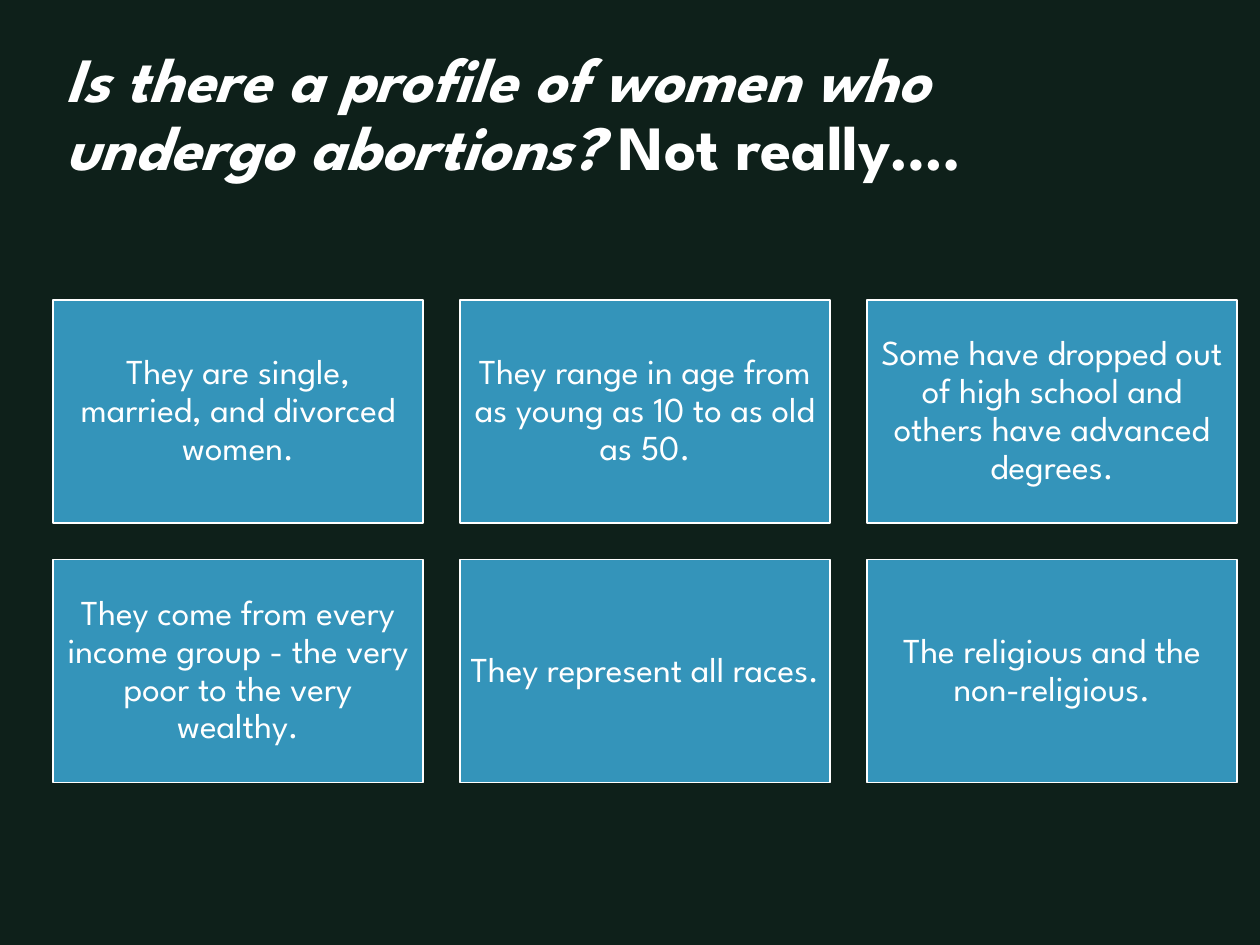
from pptx import Presentation
from pptx.dml.color import RGBColor
from pptx.enum.shapes import MSO_SHAPE as Shape
from pptx.enum.text import MSO_ANCHOR as Anchor, PP_ALIGN as Align
from pptx.util import Inches, Pt

QUESTION = "Is there a profile of women who undergo abortions? "
ANSWER = "Not really…."
FACTS = [
    "They are single, married, and divorced women.",
    "They range in age from as young as 10 to as old as 50.",
    "Some have dropped out of high school and others have advanced degrees.",
    "They come from every income group - the very poor to the very wealthy.",
    "They represent all races.",
    "The religious and the non-religious.",
]

FONT = "League Spartan"
BACKGROUND, CARD, WHITE = "0E201A", "3494BA", "FFFFFF"
LEFT, TOP = 0.42, 2.38
COLUMNS = 3
CARD_WIDTH, CARD_HEIGHT, GAP = 2.94, 1.77, 0.29
PADDING = 0.08


def color(hex_code):
    return RGBColor.from_string(hex_code)


def style(paragraph, size):
    paragraph.line_spacing = 0.9
    paragraph.font.name = FONT
    paragraph.font.size = Pt(size)
    paragraph.font.color.rgb = color(WHITE)


def add_title(slide):
    frame = slide.shapes.add_textbox(
        Inches(LEFT), Inches(0.3), Inches(9), Inches(1.25)).text_frame
    frame.word_wrap = True
    frame.vertical_anchor = Anchor.MIDDLE
    title = frame.paragraphs[0]
    style(title, 36)
    title.font.bold = True
    for words, italic in ((QUESTION, True), (ANSWER, False)):
        run = title.add_run()
        run.text = words
        run.font.italic = italic


def add_card(slide, index, fact):
    row, column = divmod(index, COLUMNS)
    card = slide.shapes.add_shape(
        Shape.RECTANGLE,
        Inches(LEFT + column * (CARD_WIDTH + GAP)),
        Inches(TOP + row * (CARD_HEIGHT + GAP)),
        Inches(CARD_WIDTH), Inches(CARD_HEIGHT))
    card.shadow.inherit = False
    card.fill.solid()
    card.fill.fore_color.rgb = color(CARD)
    card.line.color.rgb = color(WHITE)
    card.line.width = Pt(1)
    frame = card.text_frame
    frame.word_wrap = True
    frame.vertical_anchor = Anchor.MIDDLE
    frame.margin_left = frame.margin_right = Inches(PADDING)
    frame.margin_top = frame.margin_bottom = Inches(PADDING)
    frame.text = fact
    frame.paragraphs[0].alignment = Align.CENTER
    style(frame.paragraphs[0], 20)


def main():
    deck = Presentation()
    deck.slide_width, deck.slide_height = Inches(10), Inches(7.5)
    slide = deck.slides.add_slide(deck.slide_layouts[6])
    slide.background.fill.solid()
    slide.background.fill.fore_color.rgb = color(BACKGROUND)
    add_title(slide)
    for index, fact in enumerate(FACTS):
        add_card(slide, index, fact)
    deck.save("out.pptx")


if __name__ == "__main__":
    main()
